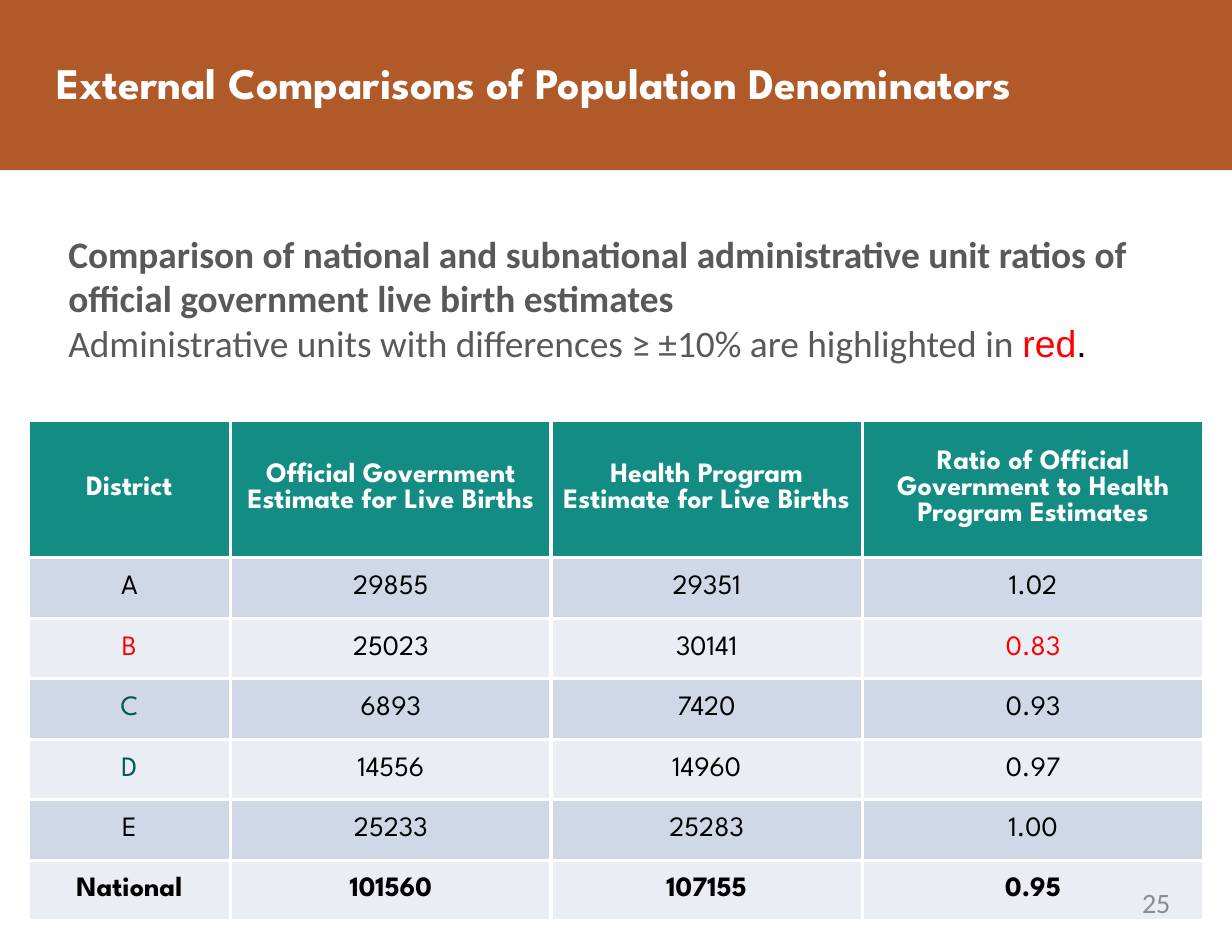
from dataclasses import dataclass

from lxml import etree
from pptx import Presentation
from pptx.dml.color import RGBColor
from pptx.enum.shapes import MSO_SHAPE
from pptx.enum.text import MSO_ANCHOR, PP_ALIGN
from pptx.oxml.ns import qn
from pptx.util import Inches, Pt

RECTANGLE = MSO_SHAPE.RECTANGLE
MIDDLE, BOTTOM = MSO_ANCHOR.MIDDLE, MSO_ANCHOR.BOTTOM
CENTER, RIGHT = PP_ALIGN.CENTER, PP_ALIGN.RIGHT


@dataclass(frozen=True)
class Theme:
    banner: str = "B05A2A"
    header: str = "138D84"
    bands: tuple = ("D0D8E8", "E9EDF4")
    white: str = "FFFFFF"
    black: str = "000000"
    red: str = "FF0000"
    green: str = "005A58"
    text: str = "595959"
    muted: str = "8C8C8C"
    display: str = "League Spartan"
    body: str = "Calibri"
    accent: str = "Arial"
    title_size: int = 28
    body_size: int = 24
    small_size: int = 18
    border: float = 2.25


T = Theme()

HEADERS = [
    "District",
    "Official Government Estimate for Live Births",
    "Health Program Estimate for Live Births",
    "Ratio of Official Government to Health Program Estimates",
]
ROWS = [
    ["A", "29855", "29351", "1.02"],
    ["B", "25023", "30141", "0.83"],
    ["C", "6893", "7420", "0.93"],
    ["D", "14556", "14960", "0.97"],
    ["E", "25233", "25283", "1.00"],
    ["National", "101560", "107155", "0.95"],
]
HIGHLIGHTS = {"B": T.red, "0.83": T.red, "C": T.green, "D": T.green}
COL_WIDTHS = [1.81, 2.86, 2.78, 3.05]
HEADER_HEIGHT, ROW_HEIGHT = 1.23, 0.54


def set_font(font, name, size, color, bold=False):
    font.name = name
    font.size = Pt(size)
    font.bold = bold
    font.color.rgb = RGBColor.from_string(color)


def set_margins(tf, x, y):
    tf.margin_left = tf.margin_right = Inches(x)
    tf.margin_top = tf.margin_bottom = Inches(y)


def add_banner(s):
    sp = s.shapes.add_shape(RECTANGLE, 0, 0, Inches(11), Inches(1.52))
    sp.shadow.inherit = False
    sp.fill.solid()
    sp.fill.fore_color.rgb = RGBColor.from_string(T.banner)
    sp.line.fill.background()


def set_title(s, text):
    sp = s.shapes.title
    sp._element.getparent().append(sp._element)
    sp.left, sp.top = Inches(0.5), Inches(0.5)
    sp.width, sp.height = Inches(10.53), Inches(0.47)
    tf = sp.text_frame
    set_margins(tf, 0, 0)
    tf.vertical_anchor = BOTTOM
    tf.text = text
    p = tf.paragraphs[0]
    p.alignment = PP_ALIGN.LEFT
    set_font(p.font, T.display, T.title_size, T.white, True)


def add_text_box(s, x, y, w, h, margins):
    tf = s.shapes.add_textbox(Inches(x), Inches(y), Inches(w), Inches(h)).text_frame
    tf.word_wrap = True
    set_margins(tf, *margins)
    return tf


def add_intro(s):
    tf = add_text_box(s, 0.5, 2, 10.17, 1.32, (0.11, 0.06))
    p = tf.paragraphs[0]
    p.text = ("Comparison of national and subnational administrative unit ratios "
              "of official government live birth estimates")
    set_font(p.font, T.body, T.body_size, T.text, True)
    p = tf.add_paragraph()
    for text, name, color in [
        ("Administrative units with differences ≥ ±10% are highlighted in ", T.body, T.text),
        ("red", T.accent, T.red),
        (".", T.accent, T.black),
    ]:
        r = p.add_run()
        r.text = text
        set_font(r.font, name, T.body_size, color)


def set_borders(cell):
    tc_pr = cell._tc.get_or_add_tcPr()
    for i, side in enumerate(("a:lnL", "a:lnR", "a:lnT", "a:lnB")):
        ln = etree.Element(qn(side), w=str(Pt(T.border)))
        fill = etree.SubElement(ln, qn("a:solidFill"))
        etree.SubElement(fill, qn("a:srgbClr"), val=T.white)
        tc_pr.insert(i, ln)


def set_cell(cell, text, fill, color, bold):
    cell.fill.solid()
    cell.fill.fore_color.rgb = RGBColor.from_string(fill)
    set_borders(cell)
    set_margins(cell, 0.11, 0.06)
    cell.vertical_anchor = MIDDLE
    cell.text = text
    p = cell.text_frame.paragraphs[0]
    p.alignment = CENTER
    set_font(p.font, T.display, T.small_size, color, bold)


def add_estimates_table(s):
    height = HEADER_HEIGHT + ROW_HEIGHT * len(ROWS)
    table = s.shapes.add_table(len(ROWS) + 1, len(HEADERS), Inches(0.25), Inches(3.75),
                               Inches(sum(COL_WIDTHS)), Inches(height)).table
    for column, width in zip(table.columns, COL_WIDTHS):
        column.width = Inches(width)
    for i, row in enumerate(table.rows):
        row.height = Inches(ROW_HEIGHT if i else HEADER_HEIGHT)
    for j, text in enumerate(HEADERS):
        set_cell(table.cell(0, j), text, T.header, T.white, True)
    for i, values in enumerate(ROWS):
        for j, text in enumerate(values):
            set_cell(table.cell(i + 1, j), text, T.bands[i % 2],
                     HIGHLIGHTS.get(text, T.black), values[0] == "National")


def add_page_number(s, number):
    p = add_text_box(s, 7.92, 7.91, 2.53, 0.42, (0, 0)).paragraphs[0]
    p.text = number
    p.alignment = RIGHT
    set_font(p.font, T.body, T.small_size, T.muted)


def main():
    prs = Presentation()
    prs.slide_width, prs.slide_height = Inches(11), Inches(8.5)
    s = prs.slides.add_slide(prs.slide_layouts[5])
    add_banner(s)
    set_title(s, "External Comparisons of Population Denominators")
    add_estimates_table(s)
    add_intro(s)
    add_page_number(s, "25")
    prs.save("out.pptx")


if __name__ == "__main__":
    main()
